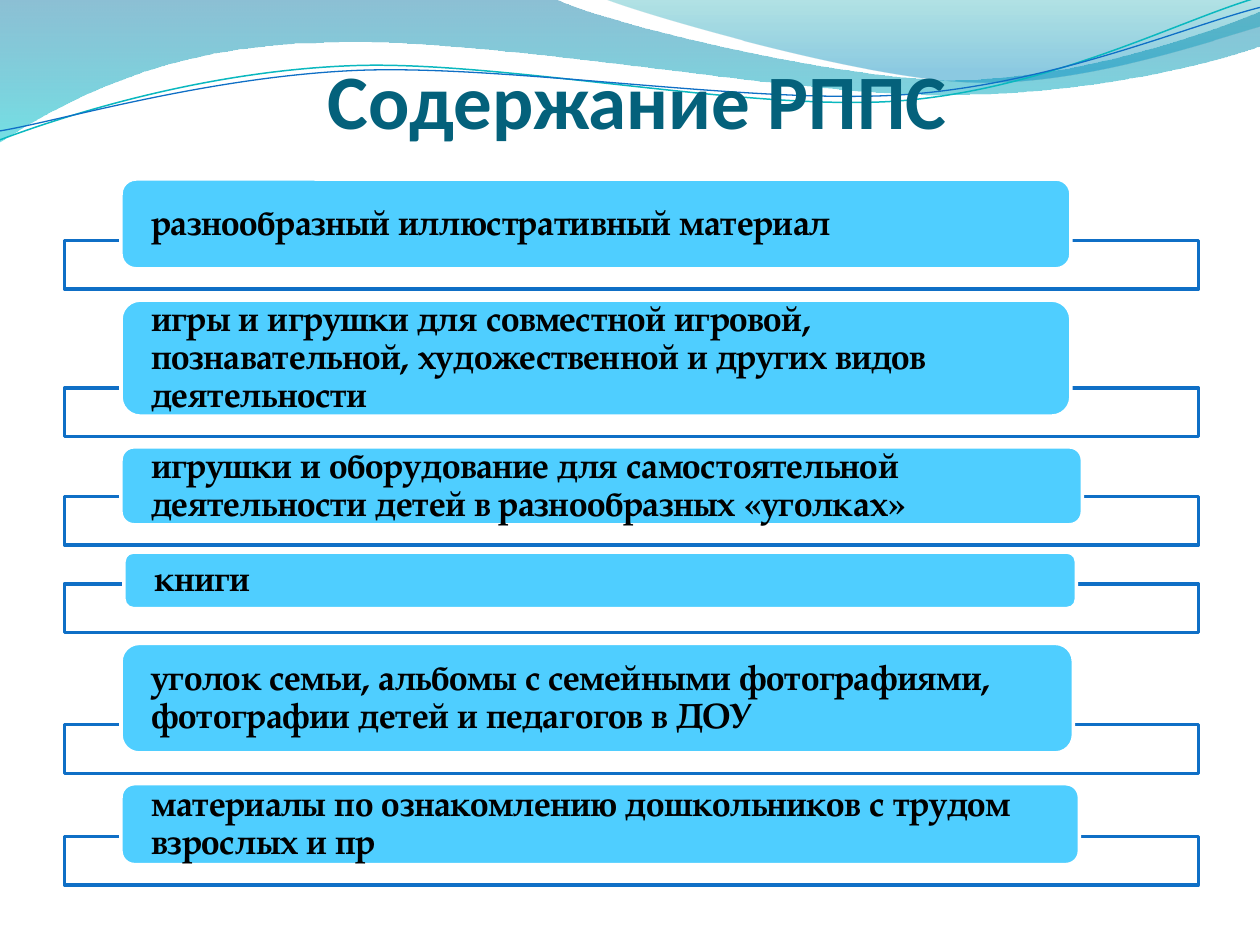
from dataclasses import dataclass
from typing import Optional

from pptx import Presentation
from pptx import util as u
from pptx.dml.color import RGBColor
from pptx.enum import shapes, text
from pptx.oxml import ns, xmlchemy

WHITE = RGBColor(0xFF, 0xFF, 0xFF)
BLACK = RGBColor(0, 0, 0)
BLUE = RGBColor(0x0F, 0x6F, 0xC6)
SKY = RGBColor(0x4F, 0xCE, 0xFF)
TITLE_TEAL = RGBColor(0x04, 0x61, 0x7B)
DEEP_BLUE = RGBColor(0x00, 0x74, 0xA1)
CYAN = RGBColor(0x00, 0xC6, 0xCF)
SEA_GREEN = RGBColor(0x00, 0xA1, 0xA9)
AZURE = RGBColor(0x00, 0x8B, 0xBF)
TURQUOISE = RGBColor(0x0A, 0xB8, 0xBF)

FRAME_LEFT, FRAME_WIDTH, FRAME_HEIGHT = 1.3, 22.86, 0.98
TEXT_INSET = 0.61
CORNER_INSET = 0.29 / 6
LINE_TILT = -2.7


@dataclass
class Stop:
    color: RGBColor
    position: float
    opacity: int


@dataclass
class Wave:
    start: tuple[float, float]
    segments: list[tuple[float, ...]]
    stops: tuple[Stop, ...] = ()
    line: Optional[RGBColor] = None
    weight: float = 0


@dataclass
class Row:
    label: str
    top: float
    height: float
    width: float
    left: float = 2.44
    overlap: float = 0.57


WAVES = [
    Wave((0, -0.03), [
        (11.18, -0.03),
        (12.09, 0.43, 16.87, 1.6, 19.25, 1.6),
        (21.67, 1.6, 24.33, 0.66, 25.4, 0.23),
        (25.43, 0.91),
        (24.97, 1.12, 22.1, 1.93, 18.95, 1.91),
        (15.8, 1.91, 9.7, 0.71, 6.53, 0.86),
        (3.28, 0.89, 1.17, 2.11, -0.03, 2.87),
        (0, -0.03),
    ], stops=(Stop(DEEP_BLUE, 0, 45), Stop(CYAN, 1, 55))),
    Wave((12.17, -0.03), [
        (12.93, 0.28, 17.32, 1.57, 19.53, 1.65),
        (21.74, 1.75, 24.41, 0.81, 25.4, 0.53),
        (25.4, 0),
        (12.17, -0.03),
    ], stops=(Stop(SEA_GREEN, 0, 30), Stop(AZURE, 0.8, 45))),
    Wave((-0.05, 2.22), [
        (1.19, 1.82, 4.02, 1.04, 7.05, 1.06),
        (10.05, 1.07, 15.02, 2.37, 18.08, 2.29),
        (21.13, 2.2, 23.87, 0.91, 25.41, 0.55),
    ], line=TURQUOISE, weight=0.85),
    Wave((-0.04, 2.04), [
        (1.16, 1.9, 4.18, 1.15, 7.2, 1.16),
        (10.25, 1.18, 15.13, 2.23, 18.18, 2.17),
        (21.21, 2.1, 23.93, 1.06, 25.45, 0.75),
    ], line=BLUE, weight=0.75),
]

ROWS = [
    Row("разнообразный иллюстративный материал", 3.61, 1.81, 19.15),
    Row("игры и игрушки для совместной игровой, познавательной, "
        "художественной и других видов деятельности", 6.05, 2.34, 19.15),
    Row("игрушки и оборудование для самостоятельной деятельности детей "
        "в разнообразных «уголках»", 9.01, 1.57, 19.38),
    Row("книги", 11.13, 1.14, 19.2, left=2.5, overlap=0.5),
    Row("уголок семьи, альбомы с семейными фотографиями, "
        "фотографии детей и педагогов в ДОУ", 12.97, 2.21, 19.2),
    Row("материалы по ознакомлению дошкольников с трудом взрослых и пр",
        15.8, 1.63, 19.32),
]


def set_opacity(shape, *percents: int) -> None:
    for color, percent in zip(shape.element.iter(ns.qn("a:srgbClr")), percents):
        alpha = xmlchemy.OxmlElement("a:alpha")
        alpha.set("val", str(percent * 1000))
        color.append(alpha)


def write(shape, content: str, *, font: str, size: float, color: RGBColor,
          align, anchor, spacing: float = 1.0,
          insets: tuple[float, float, float, float]) -> None:
    frame = shape.text_frame
    frame.word_wrap = True
    frame.auto_size = text.MSO_AUTO_SIZE.NONE
    frame.vertical_anchor = anchor
    (frame.margin_left, frame.margin_top,
     frame.margin_right, frame.margin_bottom) = map(u.Cm, insets)
    para = frame.paragraphs[0]
    para.alignment = align
    para.line_spacing = spacing
    span = para.add_run()
    span.text = content
    span.font.name = font
    span.font.size = u.Pt(size)
    span.font.bold = True
    span.font.color.rgb = color


def bend_segments(shape, segments: list[tuple[float, ...]]) -> None:
    steps = iter(list(shape.element.iter(ns.qn("a:lnTo"))))
    for segment in segments:
        first = next(steps)
        if len(segment) == 2:
            continue
        curve = xmlchemy.OxmlElement("a:cubicBezTo")
        first.addprevious(curve)
        for step in (first, next(steps), next(steps)):
            curve.append(step[0])
            step.getparent().remove(step)


def draw_wave(page, wave: Wave) -> None:
    builder = page.shapes.build_freeform(*map(u.Cm, wave.start))
    places = [(u.Cm(segment[i]), u.Cm(segment[i + 1]))
              for segment in wave.segments for i in range(0, len(segment), 2)]
    builder.add_line_segments(places, close=bool(wave.stops))
    shape = builder.convert_to_shape()
    bend_segments(shape, wave.segments)
    shape.shadow.inherit = False
    if wave.stops:
        shape.fill.gradient()
        shape.fill.gradient_angle = 270
        for target, stop in zip(shape.fill.gradient_stops, wave.stops):
            target.color.rgb = stop.color
            target.position = stop.position
        set_opacity(shape, *(stop.opacity for stop in wave.stops))
        shape.line.fill.background()
    else:
        shape.rotation = LINE_TILT
        shape.fill.background()
        shape.line.color.rgb = wave.line
        shape.line.width = u.Pt(wave.weight)


def draw_box(page, kind, left: float, top: float, width: float, height: float,
             fill: RGBColor, line: RGBColor):
    box = page.shapes.add_shape(kind, *map(u.Cm, (left, top, width, height)))
    box.shadow.inherit = False
    box.fill.solid()
    box.fill.fore_color.rgb = fill
    box.line.color.rgb = line
    box.line.width = u.Pt(2)
    return box


def draw_row(page, row: Row) -> None:
    frame = draw_box(page, shapes.MSO_SHAPE.RECTANGLE, FRAME_LEFT,
                     row.top + row.height - row.overlap,
                     FRAME_WIDTH, FRAME_HEIGHT, WHITE, BLUE)
    set_opacity(frame, 90)
    label = draw_box(page, shapes.MSO_SHAPE.ROUNDED_RECTANGLE, row.left, row.top,
                     row.width, row.height, SKY, WHITE)
    side = TEXT_INSET - CORNER_INSET * row.height
    write(label, row.label, font="TeX Gyre Pagella", size=20, color=BLACK,
          align=text.PP_ALIGN.LEFT, anchor=text.MSO_ANCHOR.MIDDLE,
          spacing=0.9, insets=(side, 0, side, 0))


def main() -> None:
    deck = Presentation()
    deck.slide_width, deck.slide_height = u.Cm(25.4), u.Cm(19.05)
    page = deck.slides.add_slide(deck.slide_layouts[5])
    for wave in WAVES:
        draw_wave(page, wave)
    title = page.shapes.title
    title.element.getparent().append(title.element)
    title.left, title.top, title.width, title.height = map(
        u.Cm, (1.9, 0.91, 22.25, 2.01))
    write(title, "Содержание РППС ", font="Calibri", size=44, color=TITLE_TEAL,
          align=text.PP_ALIGN.CENTER, anchor=text.MSO_ANCHOR.BOTTOM,
          insets=(0, 0.13, 0, 0))
    for row in ROWS:
        draw_row(page, row)
    deck.save("out.pptx")


if __name__ == "__main__":
    main()
